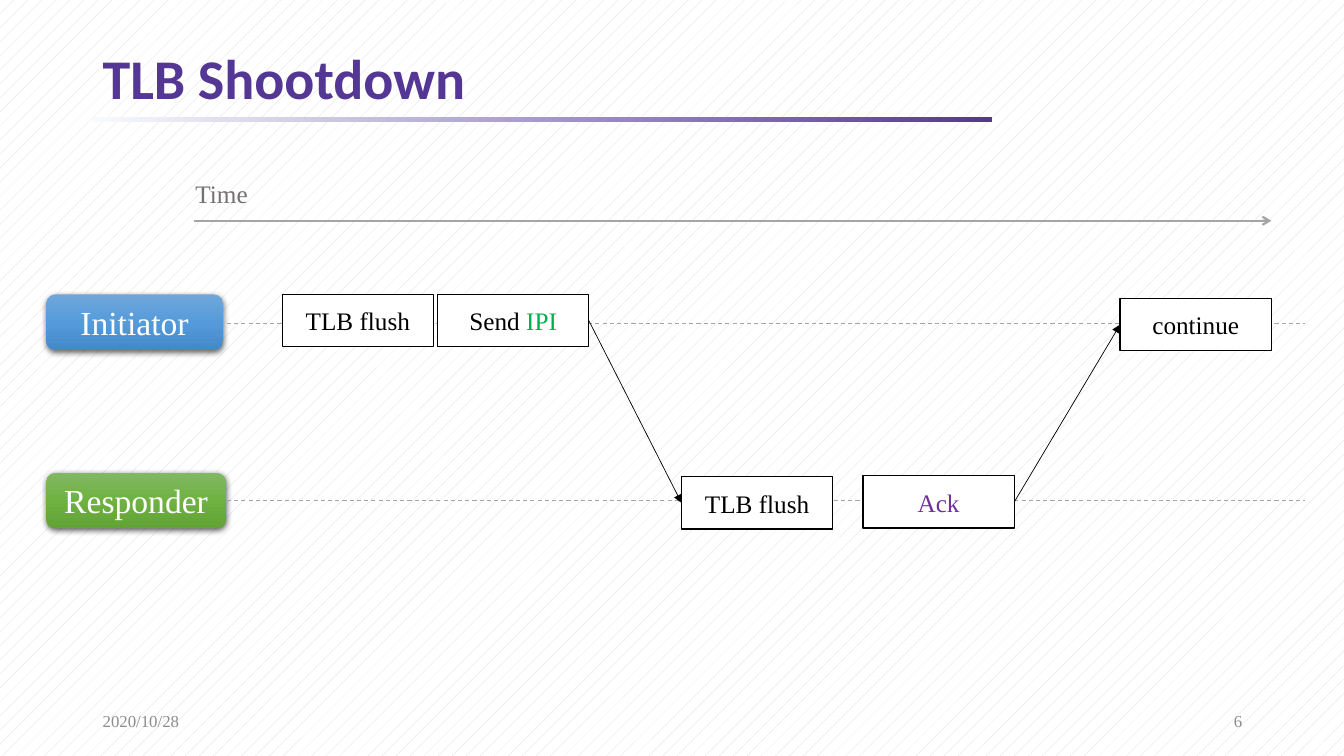
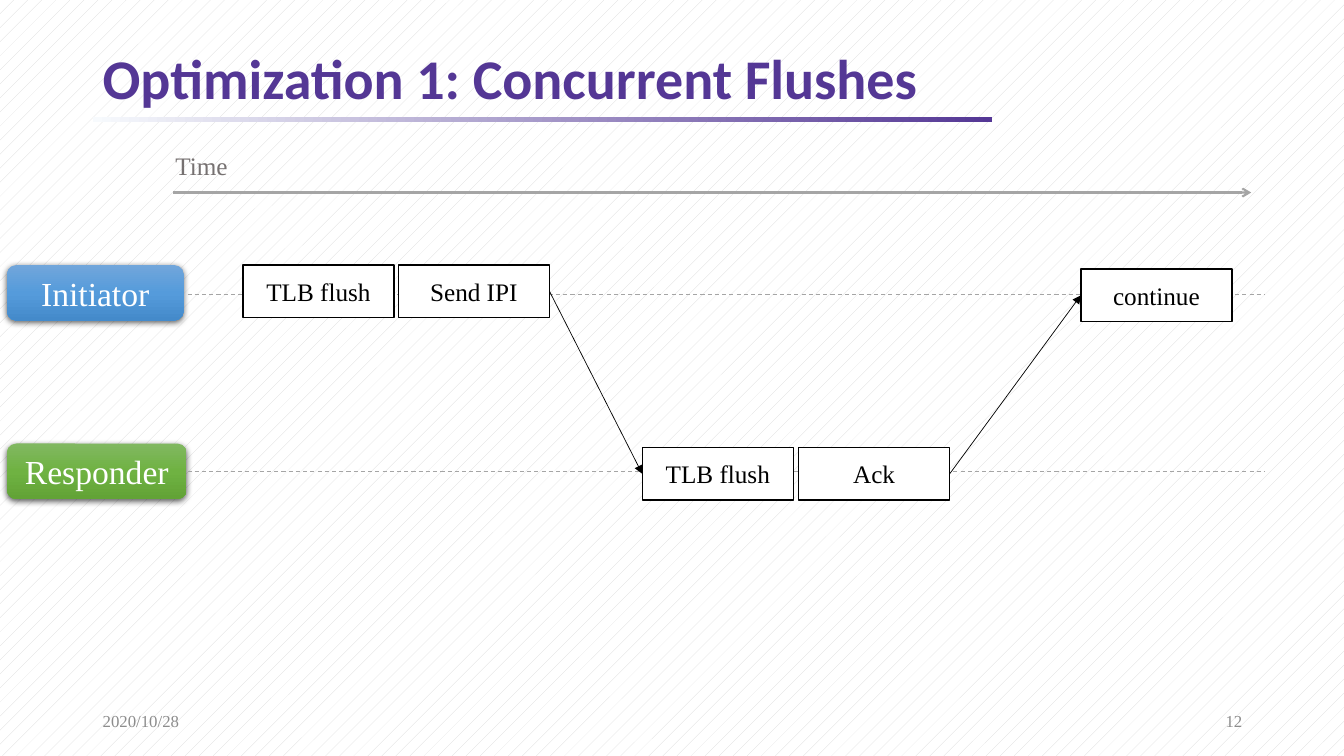
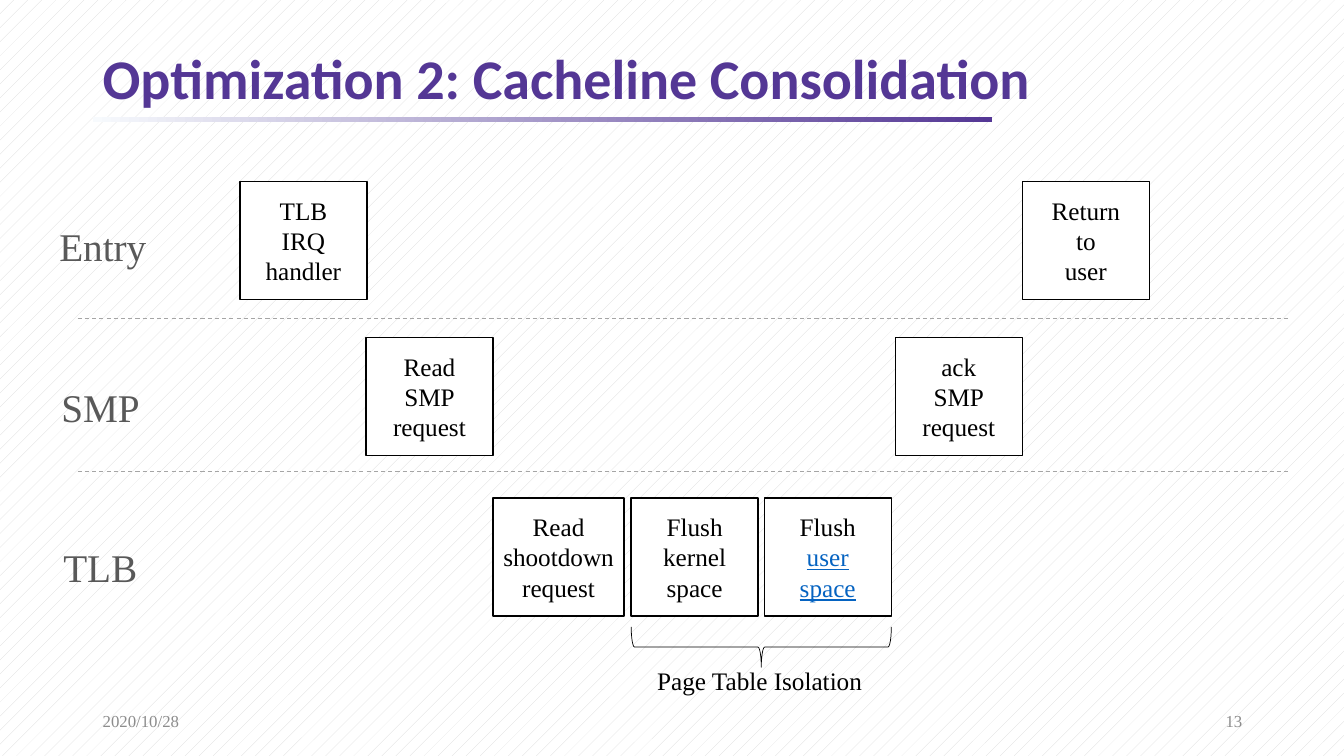
from dataclasses import dataclass

from lxml import etree
from pptx import Presentation
from pptx.dml.color import RGBColor
from pptx.enum.dml import MSO_LINE, MSO_PATTERN
from pptx.enum.shapes import MSO_CONNECTOR, MSO_SHAPE
from pptx.enum.text import MSO_ANCHOR, MSO_AUTO_SIZE, PP_ALIGN
from pptx.oxml.ns import qn
from pptx.util import Inches, Pt

RECT, ROUND_RECT, BRACE = MSO_SHAPE.RECTANGLE, MSO_SHAPE.ROUNDED_RECTANGLE, MSO_SHAPE.RIGHT_BRACE
STRAIGHT, DASH, PCT5 = MSO_CONNECTOR.STRAIGHT, MSO_LINE.DASH, MSO_PATTERN.PERCENT_5
LEFT, CENTER, RIGHT = PP_ALIGN.LEFT, PP_ALIGN.CENTER, PP_ALIGN.RIGHT
TOP, MIDDLE = MSO_ANCHOR.TOP, MSO_ANCHOR.MIDDLE
FIT = MSO_AUTO_SIZE.SHAPE_TO_FIT_TEXT
LEFT_SITE, RIGHT_SITE = 1, 3


@dataclass(frozen=True)
class Theme:
    title_font: str = "Calibri"
    body_font: str = "Times New Roman"
    title_size: int = 40
    row_size: int = 28
    role_size: int = 24
    body_size: int = 18
    footer_size: int = 12
    purple: str = "543795"
    pale: str = "F7FAFD"
    black: str = "000000"
    white: str = "FFFFFF"
    stripe: str = "D9D9D9"
    guide: str = "A5A5A5"
    axis_text: str = "767171"
    row_text: str = "595959"
    footer_text: str = "8C8C8C"
    ipi: str = "00B050"
    ack: str = "7030A0"
    link: str = "0563C1"
    initiator: tuple = ("71A6DB", "559BDB", "448ACA")
    responder: tuple = ("81B861", "6FB242", "62A336")


T = Theme()
TITLE = {"name": T.title_font, "size": Pt(T.title_size), "bold": True, "color": T.purple}
FOOTER = {"name": T.body_font, "size": Pt(T.footer_size), "color": T.footer_text}
BODY = {"name": T.body_font, "size": Pt(T.body_size), "color": T.black}
ROLE = BODY | {"size": Pt(T.role_size), "color": T.white}
ROW = BODY | {"size": Pt(T.row_size), "color": T.row_text}
AXIS = BODY | {"color": T.axis_text}
LINK = {"color": T.link, "underline": True}


def rgb(color):
    return RGBColor.from_string(color)


def inches(*lengths):
    return [Inches(round(n, 2)) for n in lengths]


def sub(parent, tag, **attrs):
    return etree.SubElement(parent, qn(tag), attrs)


def write(sp, lines, fmt, align=LEFT, anchor=TOP, spacing=None):
    """Fill a shape; each line is a string or a list of (text, changed format)."""
    tf = sp.text_frame
    tf.word_wrap, tf.vertical_anchor = True, anchor
    for i, line in enumerate(lines):
        p = tf.add_paragraph() if i else tf.paragraphs[0]
        p.alignment, p.line_spacing = align, spacing
        for text, changes in [(line, {})] if isinstance(line, str) else line:
            r = p.add_run()
            r.text = text
            for key, value in (fmt | changes).items():
                if key == "color":
                    r.font.color.rgb = rgb(value)
                else:
                    setattr(r.font, key, value)
    return tf


def add_text(s, at, text, fmt, **layout):
    return write(s.shapes.add_textbox(*inches(*at)), [text], fmt, **layout)


def add_label(s, at, text, fmt, wrap=False):
    tf = add_text(s, at, text, fmt)
    tf.word_wrap, tf.auto_size = wrap, FIT


def add_shape(s, kind, at):
    sp = s.shapes.add_shape(kind, *inches(*at))
    sp.shadow.inherit = False
    sp.fill.background()
    sp.line.fill.background()
    return sp


def set_outline(line, color, width):
    line.color.rgb, line.width = rgb(color), Pt(width)


def set_gradient(sp, colors, angle):
    """Spread the colours evenly; the angle runs anticlockwise."""
    sp.fill.gradient()
    sp.fill.gradient_angle = angle
    stops = sp._element.spPr.find(".//" + qn("a:gsLst"))
    for stop in list(stops):
        stops.remove(stop)
    for i, color in enumerate(colors):
        stop = sub(stops, "a:gs", pos=str(100000 * i // (len(colors) - 1)))
        sub(stop, "a:srgbClr", val=color)


def add_box(s, at, lines):
    sp = add_shape(s, RECT, at)
    sp.fill.solid()
    sp.fill.fore_color.rgb = rgb(T.white)
    set_outline(sp.line, T.black, 1)
    tf = write(sp, lines, BODY, CENTER, MIDDLE)
    tf.margin_left = tf.margin_right = Inches(0.05)
    return sp


def add_role(s, at, name, colors):
    sp = add_shape(s, ROUND_RECT, at)
    set_gradient(sp, colors, 270)
    shadow = sub(sp._element.spPr.find(qn("a:effectLst")), "a:outerShdw", blurRad=str(Pt(4.5)),
                 dist=str(Pt(1.5)), dir="5400000", algn="ctr", rotWithShape="0")
    sub(sub(shadow, "a:srgbClr", val=T.black), "a:alpha", val="63000")
    write(sp, [name], ROLE, CENTER, MIDDLE)


def add_line(s, ends, color, width, dash=None, head=None):
    line = s.shapes.add_connector(STRAIGHT, *inches(*ends))
    set_outline(line.line, color, width)
    if dash:
        line.line.dash_style = dash
    if head:
        sub(line.line._get_or_add_ln(), "a:tailEnd", type=head)
    sub(line._element.spPr, "a:effectLst")
    return line


def add_guide(s, x1, x2, y):
    add_line(s, (x1, y, x2, y), T.guide, 0.75, dash=DASH)


def add_message(s, source, target):
    line = add_line(s, (0, 0, 1, 1), T.black, 0.5, head="triangle")
    line.begin_connect(source, RIGHT_SITE)
    line.end_connect(target, LEFT_SITE)


def add_slide(prs, title, number):
    s = prs.slides.add_slide(prs.slide_layouts[6])
    fill = s.background.fill
    fill.patterned()
    fill.pattern = PCT5
    fill.fore_color.rgb, fill.back_color.rgb = rgb(T.stripe), rgb(T.white)
    set_gradient(add_shape(s, RECT, (0.92, 1.16, 8.92, 0.05)), (T.pale, T.purple), 0)
    add_text(s, (0.92, 0.43, 11.5, 0.75), title, TITLE, anchor=MIDDLE, spacing=0.9)
    add_text(s, (0.92, 6.95, 3, 0.4), "2020/10/28", FOOTER, anchor=MIDDLE)
    add_text(s, (9.42, 6.95, 3, 0.4), str(number), FOOTER, align=RIGHT, anchor=MIDDLE)
    return s


def add_timeline(s, x, y, axis, send, ack, ack_dx, ack_dy):
    """Draw the two lanes from corner (x, y), with the time axis at its own start."""
    ax, ay = axis
    add_line(s, (ax, ay, ax + 10.69, ay), T.guide, 1.5, head="arrow")
    add_label(s, (ax - 0.08, ay - 0.47, 0.85, 0.4), "Time", AXIS, wrap=True)
    add_role(s, (x, y, 1.75, 0.55), "Initiator", T.initiator)
    add_role(s, (x, y + 1.77, 1.78, 0.55), "Responder", T.responder)
    for dy in (0.29, 2.05):
        add_guide(s, x + 1.79, x + 12.48, y + dy)
    steps = [(2.34, 0, "TLB flush"), (3.88, 0, send), (6.3, 1.81, "TLB flush"),
             (ack_dx, ack_dy, ack), (10.65, 0.04, "continue")]
    _, sender, flush, acker, resume = [
        add_box(s, (x + dx, y + dy, 1.5, 0.52), [text]) for dx, dy, text in steps]
    add_message(s, sender, flush)
    add_message(s, acker, resume)


def add_layers(s):
    for y in (3.16, 4.68):
        add_guide(s, 0.77, 12.77, y)
    rows = [
        ("Entry", 0.49, 2.16, 1.07, 1.8,
         [(2.38, 1.26, ["TLB", "IRQ", "handler"]), (10.14, 1.26, ["Return", "to", "user"])]),
        ("SMP", 0.51, 3.75, 0.99, 3.35,
         [(3.63, 1.26, ["Read", "SMP", "request"]), (8.88, 1.26, ["ack", "SMP", "request"])]),
        ("TLB", 0.53, 5.34, 0.94, 4.94,
         [(4.89, 1.3, ["Read", "shootdown", "request"]),
          (6.26, 1.26, ["Flush", "kernel", "space"]),
          (7.58, 1.26, ["Flush", [("user", LINK)], [("space", LINK)]])]),
    ]
    for name, x, y, width, box_y, boxes in rows:
        add_label(s, (x, y, width, 0.57), name, ROW)
        for box_x, box_width, lines in boxes:
            add_box(s, (box_x, box_y, box_width, 1.17), lines)
    brace = add_shape(s, BRACE, (7.35, 5.13, 0.4, 2.58))
    brace.rotation = 90
    set_outline(brace.line, T.black, 0.5)
    add_label(s, (6.42, 6.55, 2.26, 0.4), "Page Table Isolation", BODY)


def main():
    prs = Presentation()
    prs.slide_width, prs.slide_height = Inches(13.33), Inches(7.5)
    add_timeline(add_slide(prs, "TLB Shootdown", 6), 0.46, 2.92, (1.92, 2.19),
                 [("Send ", {}), ("IPI", {"color": T.ipi})], [("Ack", {"color": T.ack})],
                 8.1, 1.8)
    add_timeline(add_slide(prs, "Optimization 1: Concurrent Flushes", 12), 0.07, 2.63,
                 (1.72, 1.91), "Send IPI", "Ack", 7.85, 1.81)
    add_layers(add_slide(prs, "Optimization 2: Cacheline Consolidation", 13))
    prs.save("out.pptx")


if __name__ == "__main__":
    main()
